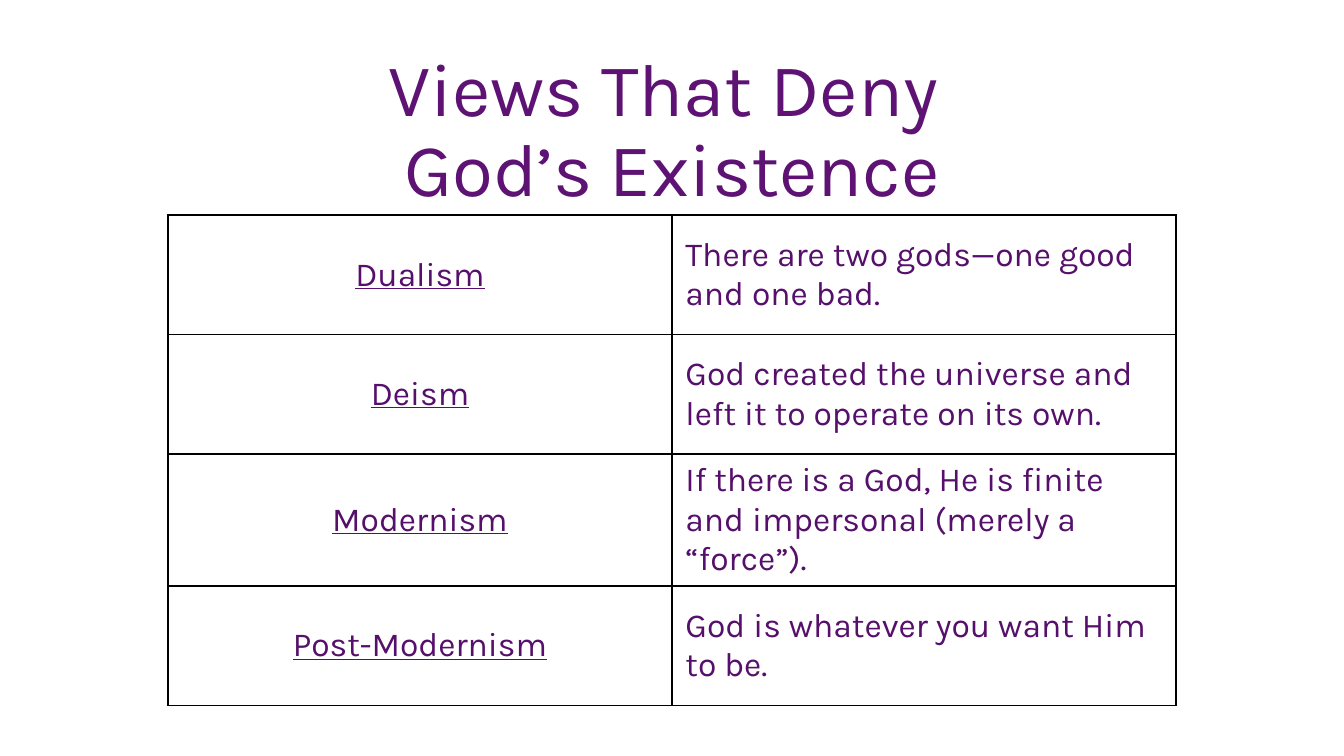
from copy import deepcopy

from lxml.etree import SubElement
from pptx import Presentation
from pptx.dml.color import RGBColor
from pptx.enum.text import MSO_ANCHOR, PP_ALIGN
from pptx.oxml.ns import qn
from pptx.util import Inches, Pt


def write(frame, text, size, color, align=PP_ALIGN.LEFT, underline=False, spacing=None):
    paragraph = frame.paragraphs[0]
    paragraph.text = text
    paragraph.alignment = align
    paragraph.line_spacing = spacing
    for run in paragraph.runs:
        run.font.name = "Karla"
        run.font.size = Pt(size)
        run.font.underline = underline
        run.font.color.rgb = RGBColor.from_string(color)
    # A line break takes the same format as the text around it
    for line_break in paragraph._p.findall(qn("a:br")):
        line_break.insert(0, deepcopy(paragraph.runs[0].font._rPr))


def add_borders(cell, color, width):
    properties = cell._tc.get_or_add_tcPr()
    for position, side in enumerate(("a:lnL", "a:lnR", "a:lnT", "a:lnB")):
        line = SubElement(properties, qn(side), w=str(Pt(width)))
        SubElement(SubElement(line, qn("a:solidFill")), qn("a:srgbClr"), val=color)
        properties.insert(position, line)


VIEWS = [
    ("Dualism", "There are two gods—one good and one bad."),
    ("Deism", "God created the universe and left it to operate on its own."),
    ("Modernism", "If there is a God, He is finite and impersonal (merely a “force”)."),
    ("Post-Modernism", "God is whatever you want Him to be."),
]

deck = Presentation()
WIDTH = Inches(10)
deck.slide_width, deck.slide_height = WIDTH, WIDTH * 9 // 16
slide = deck.slides.add_slide(deck.slide_layouts[5])

title = slide.shapes.title
title.left, title.width = int(WIDTH * 0.05), int(WIDTH * 0.9)
title.top, title.height = Inches(0.4), Inches(1.17)
title.text_frame.word_wrap = True
title.text_frame.vertical_anchor = MSO_ANCHOR.MIDDLE
write(title.text_frame, "Views That Deny \vGod’s Existence", size=40,
      color="5D1274", align=PP_ALIGN.CENTER, spacing=0.9)

row_height = Inches(0.89)
views_table = slide.shapes.add_table(
    len(VIEWS), 2, WIDTH // 8, Inches(1.6), WIDTH * 3 // 4, row_height * len(VIEWS)).table
views_table.first_row = False
views_table.horz_banding = False

for row, view in enumerate(VIEWS):
    for column, text in enumerate(view):
        cell = views_table.cell(row, column)
        cell.fill.background()
        cell.vertical_anchor = MSO_ANCHOR.MIDDLE
        add_borders(cell, "000000", 1)
        is_name = column == 0
        write(cell.text_frame, text, size=18, color="56106C", underline=is_name,
              align=PP_ALIGN.CENTER if is_name else PP_ALIGN.LEFT)

deck.save("out.pptx")
